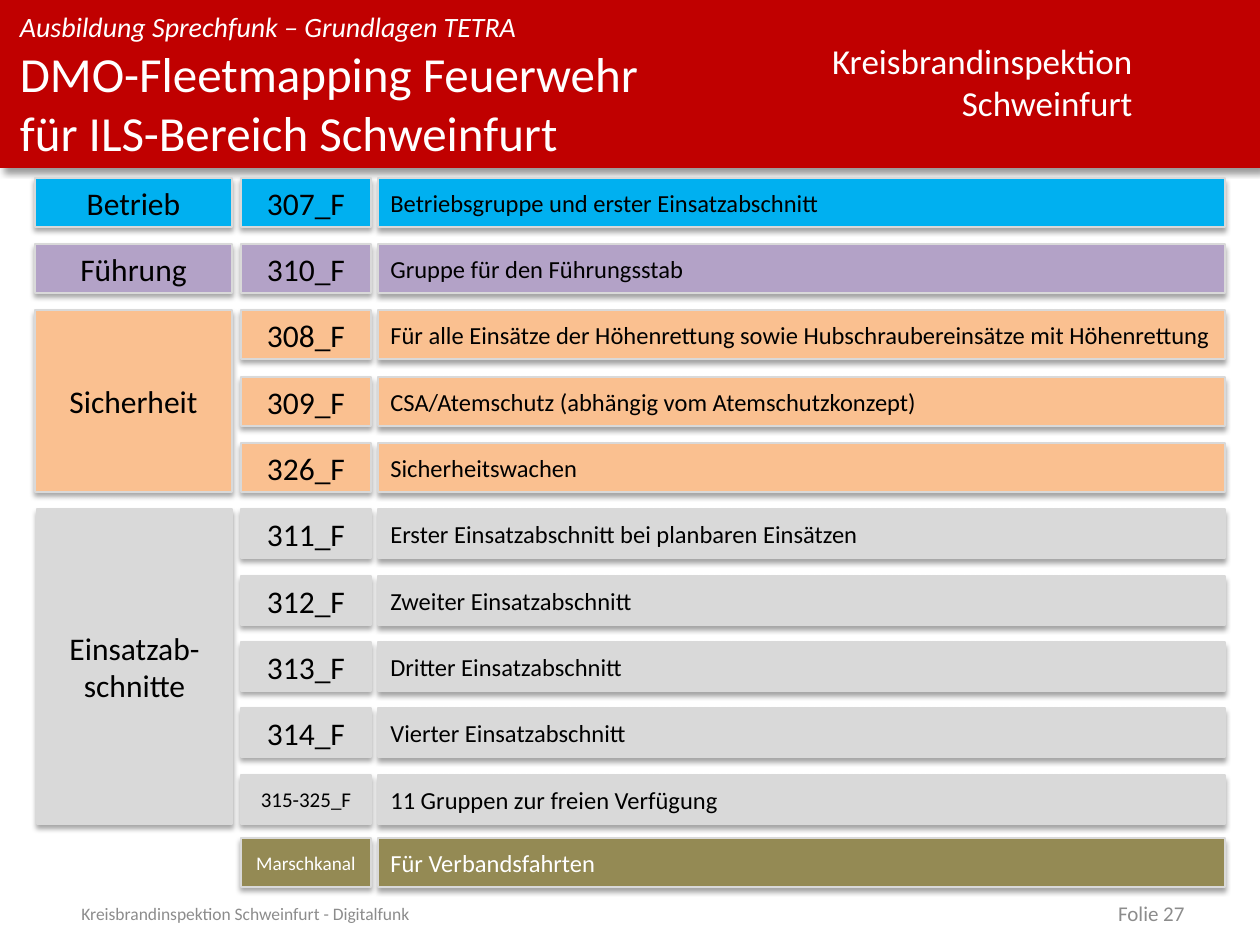
import pptx
import pptx.dml.color
import pptx.enum.shapes
import pptx.enum.text
import pptx.oxml
import pptx.oxml.ns
import pptx.util

RGB = pptx.dml.color.RGBColor
ALIGN = pptx.enum.text.PP_ALIGN
MID = pptx.enum.text.MSO_ANCHOR.MIDDLE
TOP = pptx.enum.text.MSO_ANCHOR.TOP

RED = RGB(0xC0, 0x00, 0x00)
BLUE = RGB(0x00, 0xB0, 0xF0)
LILAC = RGB(0xB3, 0xA2, 0xC7)
PEACH = RGB(0xFA, 0xC0, 0x90)
GREY = RGB(0xD9, 0xD9, 0xD9)
OLIVE = RGB(0x94, 0x8A, 0x54)
FOOT = RGB(0x8C, 0x8C, 0x8C)
WHITE = RGB(0xFF, 0xFF, 0xFF)
BLACK = RGB(0x00, 0x00, 0x00)

PX = 914400 / 126

deck = pptx.Presentation()
deck.slide_width = round(1260 * PX)
deck.slide_height = round(945 * PX)
slide = deck.slides.add_slide(deck.slide_layouts[6])


def put(text, x, y, w, h, size=18, color=BLACK, align=ALIGN.LEFT, anchor=MID,
        fill=None, inset=True, italic=False, wrap=True):
    """Add a text box, or a rectangle if a fill is given."""
    area = [round(v * PX) for v in (x, y, w, h)]
    if fill is None:
        box = slide.shapes.add_textbox(*area)
    else:
        box = slide.shapes.add_shape(
            pptx.enum.shapes.MSO_SHAPE.RECTANGLE, *area)
        box.fill.solid()
        box.fill.fore_color.rgb = fill
        box.line.color.rgb = GREY
        box.line.width = pptx.util.Pt(0.75)
    frame = box.text_frame
    frame.word_wrap = wrap
    frame.vertical_anchor = anchor
    if not inset:
        frame.margin_left = frame.margin_right = 0
        frame.margin_top = frame.margin_bottom = 0
    frame.text = text
    for para in frame.paragraphs:
        para.alignment = align
        para.font.name = "Calibri"
        para.font.size = pptx.util.Pt(size)
        para.font.italic = italic
        para.font.color.rgb = color
    return box


def shade(box, blur, dist, angle, alpha):
    """Give a shape an outer shadow: points, degrees and percent."""
    box.shadow.inherit = False
    glow = box.element.spPr.find(pptx.oxml.ns.qn("a:effectLst"))
    glow.append(pptx.oxml.parse_xml(
        f'<a:outerShdw {pptx.oxml.ns.nsdecls("a")} '
        f'blurRad="{pptx.util.Pt(blur)}" dist="{pptx.util.Pt(dist)}" '
        f'dir="{angle * 60000}" algn="t" rotWithShape="0">'
        f'<a:srgbClr val="000000"><a:alpha val="{alpha * 1000}"/></a:srgbClr>'
        '</a:outerShdw>'))


# Header band
band = put("", 0, 0, 1260, 168, fill=RED)
band.line.fill.background()
shade(band, 4, 3, 45, 40)
put("Kreisbrandinspektion\nSchweinfurt", 816, 33, 329, 97, size=20,
    color=WHITE, align=ALIGN.RIGHT, anchor=TOP, wrap=False)
put("Ausbildung Sprechfunk – Grundlagen TETRA", 20, 10, 796, 34, size=16,
    color=WHITE, anchor=TOP, inset=False, italic=True)
put("DMO-Fleetmapping Feuerwehr\vfür ILS-Bereich Schweinfurt", 20, 44, 796,
    125, size=28, color=WHITE, anchor=TOP, inset=False)

# Channel groups: label, left edge, fill, rows of channel and use
groups = [
    ("Betrieb", 35, BLUE, [
        ("307_F", "Betriebsgruppe und erster Einsatzabschnitt")]),
    ("Führung", 35, LILAC, [("310_F", "Gruppe für den Führungsstab")]),
    ("Sicherheit", 35, PEACH, [
        ("308_F", "Für alle Einsätze der Höhenrettung sowie "
                  "Hubschraubereinsätze mit Höhenrettung"),
        ("309_F", "CSA/Atemschutz (abhängig vom Atemschutzkonzept)"),
        ("326_F", "Sicherheitswachen")]),
    ("Einsatzab-schnitte", 37, GREY, [
        ("311_F", "Erster Einsatzabschnitt bei planbaren Einsätzen"),
        ("312_F", "Zweiter Einsatzabschnitt"),
        ("313_F", "Dritter Einsatzabschnitt"),
        ("314_F", "Vierter Einsatzabschnitt"),
        ("315-325_F", "11 Gruppen zur freien Verfügung")]),
    (None, 0, OLIVE, [("Marschkanal", "Für Verbandsfahrten")]),
]
small = {"315-325_F": 12, "Marschkanal": 11}
HIGH = 49
tops = [178 + 199 * i // 3 for i in range(10)] + [838]

row = 0
for label, left, fill, lines in groups:
    ink = BLACK if label else WHITE
    first = tops[row]
    cells = []
    for code, use in lines:
        y = tops[row]
        cells.append(put(use, 378, y, 847, HIGH, size=14, color=ink,
                         fill=fill))
        cells.append(put(code, 241, y, 130, HIGH, size=small.get(code, 18),
                         color=ink, align=ALIGN.CENTER, fill=fill))
        row += 1
    if label:
        tall = tops[row - 1] + HIGH - first
        cells.append(put(label, left, first, 232 - 35 + 35 - left, tall,
                         align=ALIGN.CENTER, fill=fill))
    for cell in cells:
        shade(cell, 3.1, 1.8, 90, 35)

# Footer
put("Kreisbrandinspektion Schweinfurt - Digitalfunk", 69, 901, 761, 25,
    size=10, color=FOOT)
put("Folie 27", 903, 901, 294, 25, size=12, color=FOOT, align=ALIGN.RIGHT)

deck.save("out.pptx")
